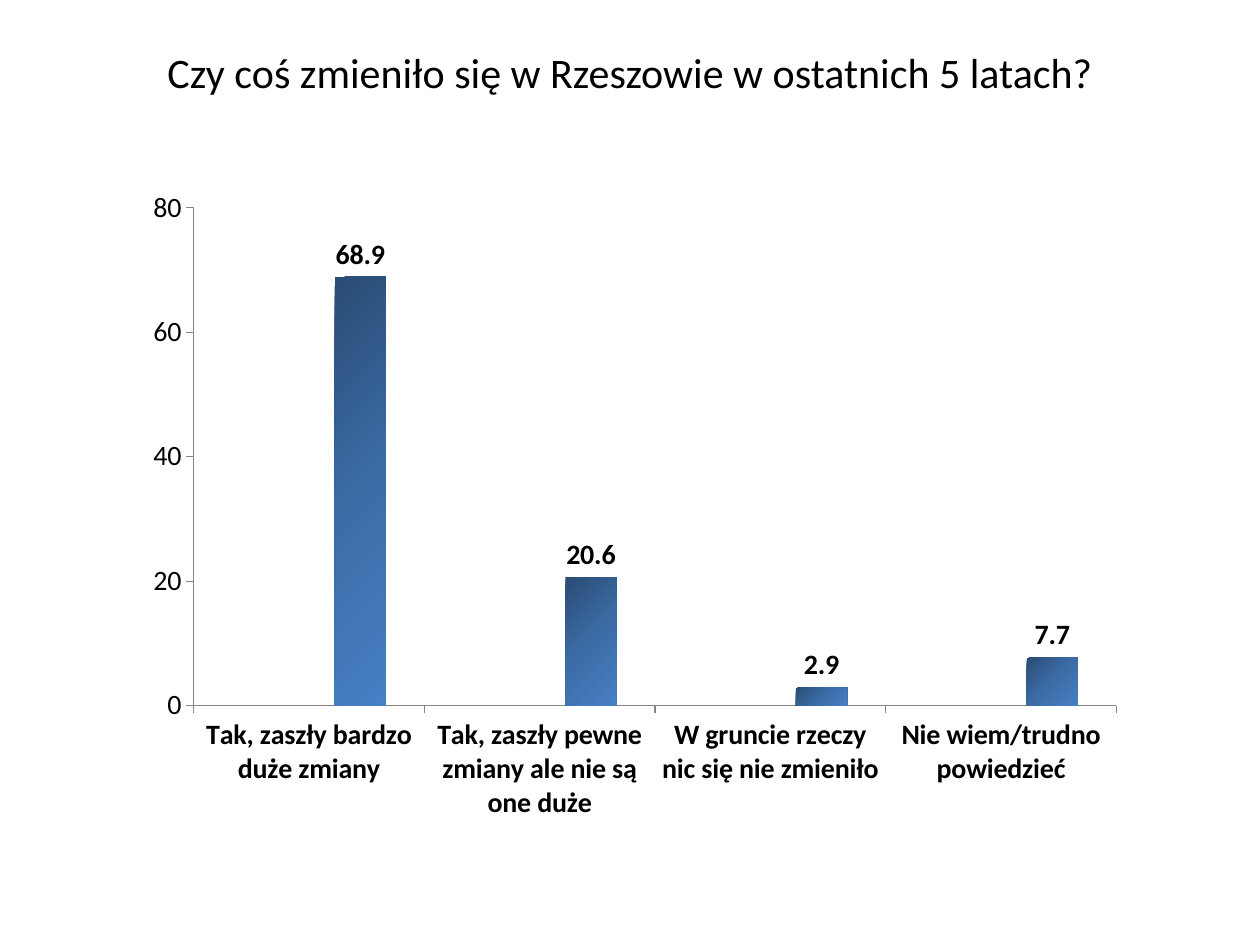
from copy import deepcopy
from dataclasses import dataclass

from pptx import Presentation
from pptx.chart.data import CategoryChartData
from pptx.dml.color import RGBColor
from pptx.enum.chart import XL_CHART_TYPE, XL_LABEL_POSITION, XL_TICK_MARK
from pptx.enum.text import MSO_ANCHOR, PP_ALIGN
from pptx.oxml import parse_xml
from pptx.oxml.ns import nsdecls, qn
from pptx.util import Inches, Pt

COLUMN_CLUSTERED = XL_CHART_TYPE.COLUMN_CLUSTERED
OUTSIDE_END = XL_LABEL_POSITION.OUTSIDE_END
TICK_OUTSIDE = XL_TICK_MARK.OUTSIDE
MIDDLE = MSO_ANCHOR.MIDDLE
CENTER = PP_ALIGN.CENTER


@dataclass(frozen=True)
class Theme:
    font: str = "Calibri"
    text: str = "000000"
    axis: str = "868686"
    series: tuple = ("4F81BD", "C0504D")
    gradient: tuple = ((0, "2A4C75"), (0.5, "3C6CA6"), (1, "4780C5"))
    title_size: int = 24
    chart_size: int = 10
    label_size: int = 16


def format_font(font, theme, size, bold=False):
    font.name = theme.font
    font.size = Pt(size)
    font.bold = bold
    font.color.rgb = RGBColor.from_string(theme.text)


def write_text(shape, text, *, theme, size, bold=False, align=CENTER, anchor=MIDDLE):
    frame = shape.text_frame
    frame.word_wrap = True
    frame.vertical_anchor = anchor
    paragraph = frame.paragraphs[0]
    paragraph.alignment = align
    run = paragraph.add_run()
    run.text = text
    format_font(run.font, theme, size, bold)


class SlideBuilder:
    def __init__(self, slide, theme):
        self.slide = slide
        self.theme = theme

    def title(self, text, left, top, width, height):
        shape = self.slide.shapes.add_textbox(
            Inches(left), Inches(top), Inches(width), Inches(height))
        write_text(shape, text, theme=self.theme, size=self.theme.title_size)

    def column_chart(self, categories, series_values, left, top, width, height):
        data = CategoryChartData()
        data.categories = categories
        for name, values in series_values.items():
            data.add_series(name, values)
        chart = self.slide.shapes.add_chart(
            COLUMN_CLUSTERED, Inches(left), Inches(top),
            Inches(width), Inches(height), data).chart
        chart.has_title = False
        chart.has_legend = False
        format_font(chart.font, self.theme, self.theme.chart_size)
        self.place_plot(chart, x=0.06, y=0.05, w=0.92, h=0.76)

        plot = chart.plots[0]
        plot.gap_width = 150
        plot.overlap = 0
        plot.vary_by_categories = False
        *empty_series, answers = plot.series
        for series, color in zip(empty_series, self.theme.series):
            series.format.fill.solid()
            series.format.fill.fore_color.rgb = RGBColor.from_string(color)
        self.gradient(answers)
        self.value_labels(answers)

        self.axis(chart.category_axis, bold=True)
        self.axis(chart.value_axis)
        chart.value_axis.minimum_scale = 0
        chart.value_axis.maximum_scale = 80
        chart.value_axis.major_unit = 20

    def place_plot(self, chart, **fractions):
        area = chart.plots[0]._element.getparent()
        for layout in area.findall(qn("c:layout")):
            area.remove(layout)
        sizes = "".join(f'<c:{key} val="{value}"/>' for key, value in fractions.items())
        area.insert(0, parse_xml(
            f'<c:layout {nsdecls("c")}><c:manualLayout><c:layoutTarget val="inner"/>'
            f'<c:xMode val="edge"/><c:yMode val="edge"/>{sizes}'
            '</c:manualLayout></c:layout>'))

    def gradient(self, series):
        fill = series.format.fill
        fill.gradient()
        fill.gradient_angle = 315
        # A new gradient has two stops; a third is needed
        stop_list = series._element.find(".//" + qn("a:gsLst"))
        stop_list.append(deepcopy(stop_list[0]))
        for stop, (position, color) in zip(fill.gradient_stops, self.theme.gradient):
            stop.position = position
            stop.color.rgb = RGBColor.from_string(color)

    def value_labels(self, series):
        labels = series.data_labels
        labels.show_value = True
        labels.position = OUTSIDE_END
        labels.number_format = "###0.0"
        labels.number_format_is_linked = False
        format_font(labels.font, self.theme, self.theme.label_size, bold=True)

    def axis(self, axis, bold=False):
        axis.has_major_gridlines = False
        axis.major_tick_mark = TICK_OUTSIDE
        axis.format.line.width = Pt(0.75)
        axis.format.line.color.rgb = RGBColor.from_string(self.theme.axis)
        format_font(axis.tick_labels.font, self.theme, self.theme.label_size, bold)


def main():
    presentation = Presentation()
    presentation.slide_width = Inches(10)
    presentation.slide_height = Inches(7.5)
    slide = presentation.slides.add_slide(presentation.slide_layouts[6])
    builder = SlideBuilder(slide, Theme())

    # Question
    builder.title("Czy coś zmieniło się w Rzeszowie w ostatnich 5 latach?",
                  0.5, 0.3, 9, 0.54)

    # Answers in percent; two empty series keep the columns to the right
    categories = [
        "Tak, zaszły bardzo duże zmiany",
        "Tak, zaszły pewne zmiany ale nie są one duże",
        "W gruncie rzeczy nic się nie zmieniło",
        "Nie wiem/trudno powiedzieć",
    ]
    empty = [None] * len(categories)
    series_values = {
        "Series 1": empty,
        "Series 2": empty,
        "Series 3": [68.9, 20.6, 2.9, 7.7],
    }
    builder.column_chart(categories, series_values, 1.06, 1.39, 7.96, 5.2)

    presentation.save("out.pptx")


if __name__ == "__main__":
    main()
